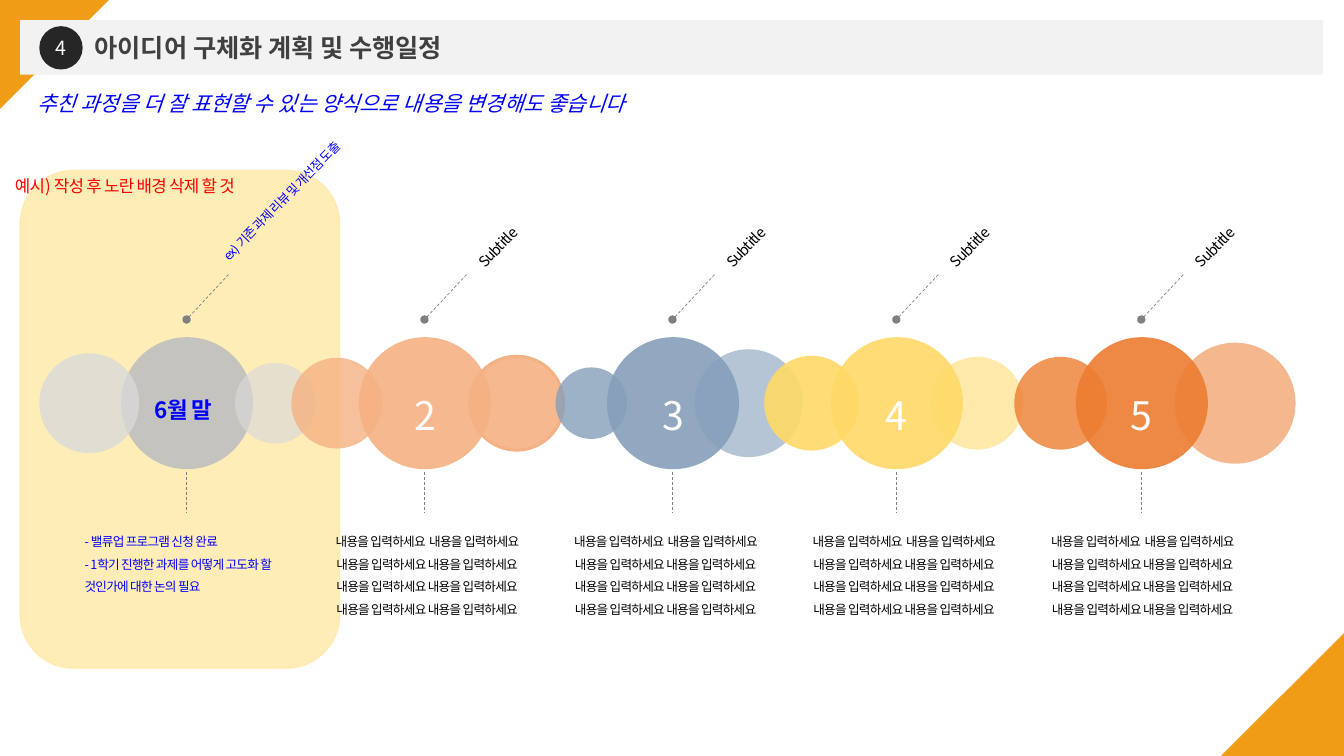
from copy import deepcopy
from dataclasses import dataclass, field
from typing import Any

from lxml.etree import SubElement
from pptx import Presentation
from pptx.dml.color import RGBColor
from pptx.enum.dml import MSO_LINE
from pptx.enum.shapes import MSO_CONNECTOR, MSO_SHAPE
from pptx.enum.text import MSO_ANCHOR, MSO_AUTO_SIZE, PP_ALIGN
from pptx.oxml.ns import qn
from pptx.util import Inches, Pt

TYPEFACE = "Noto Sans CJK KR"
ORANGE, BLUE, BLACK, WHITE = "F19C16", "0000FF", "000000", "FFFFFF"
BUBBLE_MIDDLE = 4.0
HUB_SIZE = 1.31
TILT = 314.2
BODY_LEFT, BODY_STEP = 0.74, 2.365
LOOSE = {"line_spacing": 1.5}
LOOSE_CENTRED = {"line_spacing": 1.5, "alignment": PP_ALIGN.CENTER}
PLACEHOLDER = "내용을 입력하세요 내용을 입력하세요"
PLACEHOLDER_BODY = [f"내용을 입력하세요  내용을 입력하세요 {PLACEHOLDER}\n{PLACEHOLDER}", PLACEHOLDER]


@dataclass
class Box:
    left: float
    top: float
    width: float
    height: float

    def lengths(self) -> list[int]:
        return [Inches(v) for v in (self.left, self.top, self.width, self.height)]


@dataclass
class Satellite:
    left: float
    size: float
    opacity: int
    outline: float = 0


@dataclass
class Stage:
    centre: float
    label: str
    color: str
    satellites: list[Satellite]
    satellite_color: str = ""
    hub_in_front: bool = False
    subtitle: str = "Subtitle"
    body: list[str] = field(default_factory=lambda: PLACEHOLDER_BODY)
    is_example: bool = False


STAGES = [
    Stage(1.85, "6월 말", "BFBFBF", [Satellite(0.39, 0.99, 80), Satellite(2.33, 0.8, 65)], "D9D9D9",
          subtitle="ex) 기존 과제 리뷰 및 개선점 도출",
          body=["- 밸류업 프로그램 신청 완료",
                "- 1학기 진행한 과제를 어떻게 고도화 할 것인가에 대한 논의 필요"],
          is_example=True),
    Stage(4.21, "2", "F4B183", [Satellite(2.89, 0.9, 80), Satellite(4.66, 0.93, 90, 2.25)]),
    Stage(6.67, "3", "869FBA", [Satellite(5.51, 0.71, 80), Satellite(6.89, 1.07, 60)],
          hub_in_front=True),
    Stage(8.89, "4", "FFD966", [Satellite(7.58, 0.94, 90), Satellite(9.23, 0.92, 55)]),
    Stage(11.32, "5", "ED7D31", [Satellite(10.06, 0.92, 80), Satellite(11.65, 1.2, 55)]),
]


def paint(color_format: Any, color: str) -> None:
    color_format.rgb = RGBColor.from_string(color)


def fade(properties: Any, opacity: int) -> None:
    tint = properties.find(f"{qn('a:solidFill')}/{qn('a:srgbClr')}")
    SubElement(tint, qn("a:alpha"), val=str(opacity * 1000))


def apply(target: Any, values: dict[str, Any]) -> None:
    for name, value in values.items():
        setattr(target, name, value)


def add_figure(slide: Any, kind: MSO_SHAPE, box: Box, color: str, opacity: int = 100,
               outline: float = 0, rotation: float = 0) -> Any:
    figure = slide.shapes.add_shape(kind, *box.lengths())
    figure.shadow.inherit = False
    figure.rotation = rotation
    figure.fill.solid()
    paint(figure.fill.fore_color, color)
    if opacity < 100:
        fade(figure.fill._xPr, opacity)
    if outline:
        figure.line.width = Pt(outline)
        paint(figure.line.color, color)
    else:
        figure.line.fill.background()
    return figure


def write(frame: Any, lines: list[str], size: float, color: str, layout: dict[str, Any],
          style: dict[str, Any], tracking: float) -> None:
    for index, line in enumerate(lines):
        paragraph = frame.paragraphs[0] if index == 0 else frame.add_paragraph()
        paragraph.text = line
        apply(paragraph, layout)
        for run in paragraph.runs:
            apply(run.font, {"size": Pt(size), "name": TYPEFACE, **style})
            paint(run.font.color, color)
            properties = run._r.get_or_add_rPr()
            SubElement(properties, qn("a:ea"), typeface=TYPEFACE)
            if tracking:
                properties.set("spc", str(int(tracking * 100)))
        for line_break in paragraph._p.findall(qn("a:br")):
            line_break.append(deepcopy(paragraph.runs[0]._r.rPr))


def add_text(slide: Any, box: Box, lines: list[str], size: float, color: str,
             layout: dict[str, Any], style: dict[str, Any] | None = None,
             tracking: float = -0.5, rotation: float = 0) -> None:
    label = slide.shapes.add_textbox(*box.lengths())
    label.rotation = rotation
    apply(label.text_frame, {"word_wrap": True, "auto_size": MSO_AUTO_SIZE.SHAPE_TO_FIT_TEXT})
    write(label.text_frame, lines, size, color, layout, style or {}, tracking)


def add_dashes(slide: Any, start: tuple[float, float], end: tuple[float, float],
               dotted_start: bool = False) -> None:
    dashes = slide.shapes.add_connector(
        MSO_CONNECTOR.STRAIGHT, *[Inches(v) for v in (*start, *end)])
    apply(dashes.line, {"width": Pt(0.5), "dash_style": MSO_LINE.DASH})
    paint(dashes.line.color, "808080")
    if dotted_start:
        SubElement(dashes.line._get_or_add_ln(), qn("a:headEnd"), type="oval")
    SubElement(dashes._element.spPr, qn("a:effectLst"))


def add_hub(slide: Any, stage: Stage) -> None:
    box = Box(stage.centre - 0.65, BUBBLE_MIDDLE - HUB_SIZE / 2, HUB_SIZE, HUB_SIZE)
    add_figure(slide, MSO_SHAPE.OVAL, box, stage.color, 90)


def add_bubbles(slide: Any) -> None:
    for stage in STAGES:
        if not stage.hub_in_front:
            add_hub(slide, stage)
    for stage in STAGES:
        for bubble in stage.satellites:
            box = Box(bubble.left, BUBBLE_MIDDLE - bubble.size / 2, bubble.size, bubble.size)
            add_figure(slide, MSO_SHAPE.OVAL, box, stage.satellite_color or stage.color,
                       bubble.opacity, bubble.outline)
    for stage in STAGES:
        if stage.hub_in_front:
            add_hub(slide, stage)


def add_stage_texts(slide: Any, stage: Stage, index: int) -> None:
    centre = stage.centre
    body_left = BODY_LEFT + BODY_STEP * index
    if stage.is_example:
        add_text(slide, Box(centre - 0.53, 3.75, 1, 0.5), [stage.label], 16, BLUE,
                 LOOSE_CENTRED, {"bold": True})
        add_text(slide, Box(centre + 0.09, 1.72, 1.92, 0.56), [stage.subtitle], 9, BLUE,
                 LOOSE, rotation=TILT)
        add_text(slide, Box(body_left, 5.17, 2.26, 0.78), stage.body, 9, BLUE, LOOSE)
    else:
        add_text(slide, Box(centre - 0.3, 3.6, 0.61, 0.81), [stage.label], 28, WHITE,
                 LOOSE_CENTRED)
        add_text(slide, Box(centre + 0.22, 1.91, 1.6, 0.37), [stage.subtitle], 10.5, BLACK,
                 LOOSE, rotation=TILT)
        add_text(slide, Box(body_left, 5.17, 2.26, 1.01), stage.body, 9, BLACK, LOOSE_CENTRED)
    add_dashes(slide, (centre, 3.17), (centre + 0.43, 2.71), dotted_start=True)
    add_dashes(slide, (centre, 4.68), (centre, 5.08))


def main() -> None:
    deck = Presentation()
    apply(deck, {"slide_width": Inches(13.33), "slide_height": Inches(7.5)})
    slide = deck.slides.add_slide(deck.slide_layouts[6])

    example_panel = add_figure(slide, MSO_SHAPE.ROUNDED_RECTANGLE, Box(0.2, 1.69, 3.17, 4.94),
                               "FFE699", 70, 1)
    fade(example_panel.line._get_or_add_ln(), 50)
    add_figure(slide, MSO_SHAPE.RIGHT_TRIANGLE, Box(0, -0.01, 1.09, 1.09), ORANGE, rotation=90)
    add_figure(slide, MSO_SHAPE.RIGHT_TRIANGLE, Box(12.11, 6.28, 1.22, 1.22), ORANGE, rotation=270)
    add_figure(slide, MSO_SHAPE.RECTANGLE, Box(0.2, 0.2, 12.92, 0.54), "F2F2F2")
    add_text(slide, Box(0.84, 0.27, 6.03, 0.4), ["아이디어 구체화 계획 및 수행일정"], 18, "404040",
             {}, {"bold": True}, tracking=0)
    section_badge = add_figure(slide, MSO_SHAPE.OVAL, Box(0.39, 0.26, 0.43, 0.43), "262626")
    section_badge.text_frame.vertical_anchor = MSO_ANCHOR.MIDDLE
    write(section_badge.text_frame, ["4"], 14, WHITE, {"alignment": PP_ALIGN.CENTER}, {}, 0)

    add_bubbles(slide)
    for index, stage in enumerate(STAGES):
        add_stage_texts(slide, stage, index)

    add_text(slide, Box(0.27, 0.85, 6.79, 0.35),
             ["추친 과정을 더 잘 표현할 수 있는 양식으로 내용을 변경해도 좋습니다"], 15, BLUE,
             {}, {"italic": True}, tracking=0)
    add_text(slide, Box(-0.14, 1.59, 2.76, 0.4), ["예시) 작성 후 노란 배경 삭제 할 것"], 12, "FF0000",
             LOOSE_CENTRED)
    deck.save("out.pptx")


if __name__ == "__main__":
    main()
